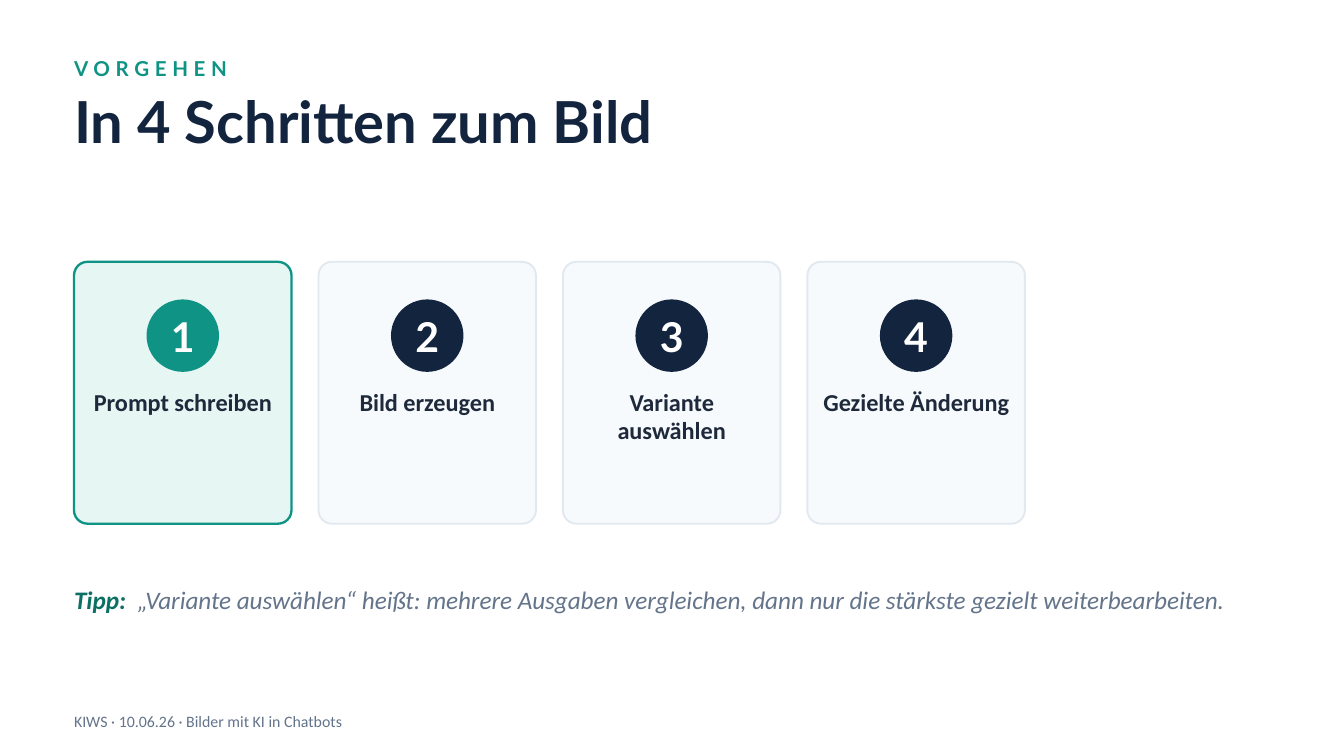
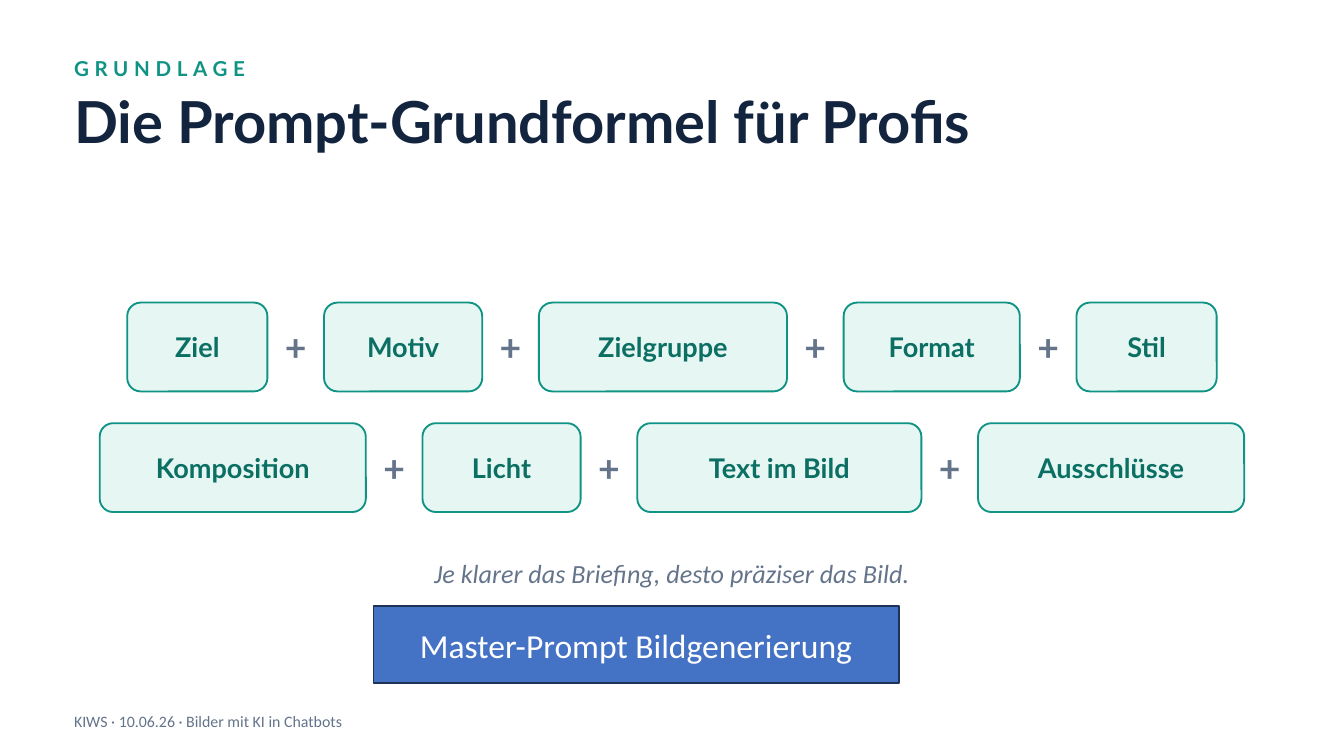
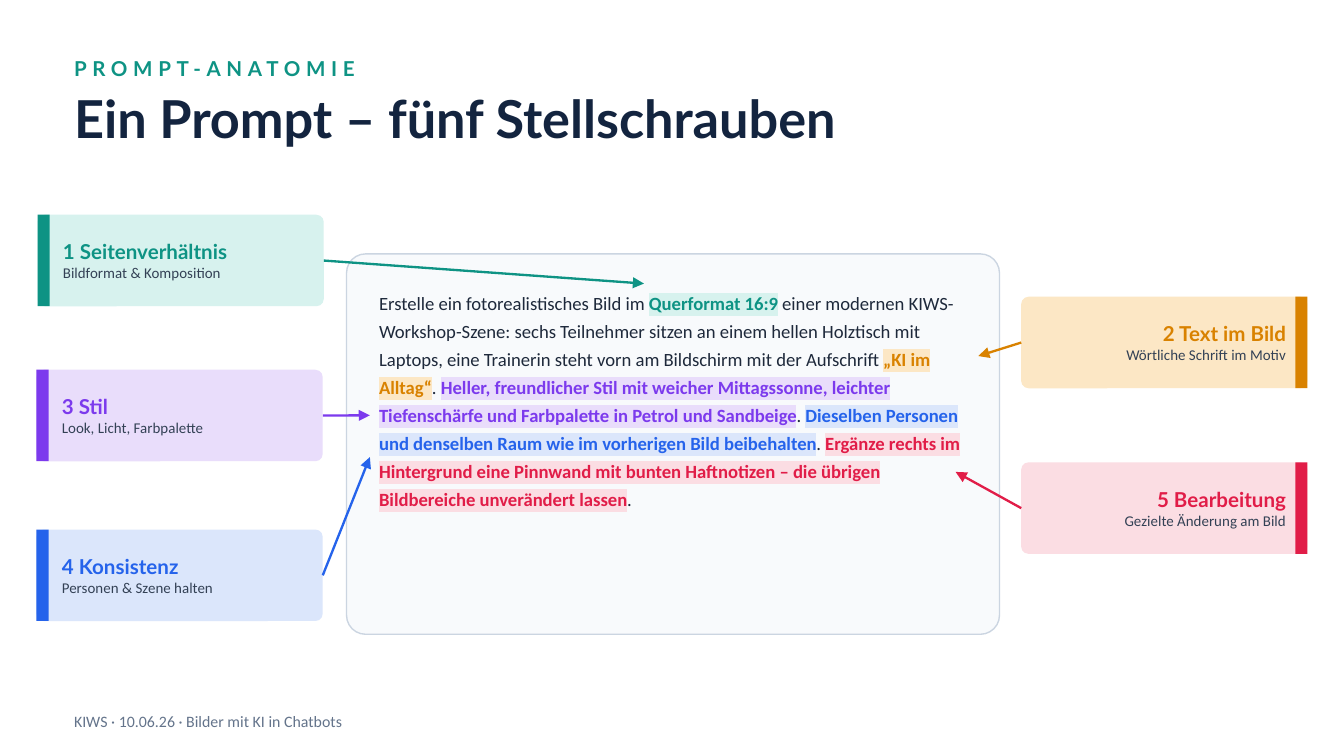
from collections import namedtuple
from dataclasses import dataclass, replace

from lxml import etree
from pptx import Presentation
from pptx.dml.color import RGBColor
from pptx.enum.shapes import MSO_CONNECTOR, MSO_SHAPE
from pptx.enum.text import MSO_ANCHOR, MSO_AUTO_SIZE, PP_ALIGN
from pptx.oxml.ns import qn
from pptx.util import Cm, Pt

TEAL, DARK_TEAL, MINT = "0E9384", "0B6F63", "E6F6F3"
NAVY, INK, SLATE, WHITE = "13243F", "1E293B", "64748B", "FFFFFF"
HEADING, BODY = "Lato", "Calibri"
MARGIN, CONTENT_WIDTH, SLIDE_WIDTH, SLIDE_HEIGHT = 1.4, 22.6, 25.4, 14.29
FOOTER = "KIWS · 10.06.26 · Bilder mit KI in Chatbots"

Box = namedtuple("Box", "left top width height")


@dataclass(frozen=True)
class Style:
    size: float
    color: str
    font: str = BODY
    bold: bool = False
    italic: bool = False
    spacing: float = 0
    highlight: str = ""


def rgb(hex_color):
    return RGBColor.from_string(hex_color)


def lengths(box):
    return [Cm(value) for value in box]


def format_run(run, style):
    font = run.font
    font.size, font.bold, font.italic = Pt(style.size), style.bold, style.italic
    font.color.rgb = rgb(style.color)
    font.name = style.font
    properties = run._r.get_or_add_rPr()
    if style.spacing:
        properties.set("spc", str(int(style.spacing * 100)))
    if style.highlight:
        mark = etree.Element(qn("a:highlight"))
        etree.SubElement(mark, qn("a:srgbClr")).set("val", style.highlight)
        properties.find(qn("a:solidFill")).addnext(mark)


def write(shape, *paragraphs, align=PP_ALIGN.LEFT, anchor=MSO_ANCHOR.TOP,
          inset=0, line_spacing=None, space_after=None):
    """Fill a shape with paragraphs, each a list of (text, style) pairs."""
    frame = shape.text_frame
    frame.word_wrap, frame.auto_size = True, MSO_AUTO_SIZE.NONE
    frame.vertical_anchor = anchor
    frame.margin_left = frame.margin_right = Cm(inset)
    frame.margin_top = frame.margin_bottom = Cm(inset)
    for index, pieces in enumerate(paragraphs):
        paragraph = frame.add_paragraph() if index else frame.paragraphs[0]
        paragraph.alignment = align
        paragraph.line_spacing = line_spacing
        paragraph.space_after = space_after
        for text, style in pieces:
            run = paragraph.add_run()
            run.text = text
            format_run(run, style)


def add_text(shapes, box, *paragraphs, **layout):
    write(shapes.add_textbox(*lengths(box)), *paragraphs, **layout)


def add_panel(shapes, kind, box, fill, line=None, line_width=1, rounding=None):
    panel = shapes.add_shape(kind, *lengths(box))
    panel.shadow.inherit = False
    panel.fill.solid()
    panel.fill.fore_color.rgb = rgb(fill)
    if line:
        panel.line.color.rgb = rgb(line)
        panel.line.width = Pt(line_width)
    else:
        panel.line.fill.background()
    if rounding is not None:
        panel.adjustments[0] = rounding
    return panel


def add_arrow(shapes, start, tip, color):
    arrow = shapes.add_connector(
        MSO_CONNECTOR.STRAIGHT, *lengths(start), *lengths(tip))
    arrow.line.color.rgb = rgb(color)
    arrow.line.width = Pt(1.25)
    etree.SubElement(arrow.line._get_or_add_ln(),
                     qn("a:tailEnd")).set("type", "triangle")
    etree.SubElement(arrow._element.spPr, qn("a:effectLst"))


def add_titled_slide(deck, eyebrow, title, title_size=31, title_height=2.16):
    """Add a slide with the shared eyebrow, title and footer."""
    slide = deck.slides.add_slide(deck.slide_layouts[5])
    heading = slide.shapes.title
    heading.left, heading.top, heading.width, heading.height = lengths(
        Box(MARGIN, 1.68, CONTENT_WIDTH, title_height))
    write(heading, [(title, Style(title_size, NAVY, HEADING, bold=True))],
          line_spacing=0.98)
    add_text(slide.shapes, Box(MARGIN, 0.91, CONTENT_WIDTH, 0.76),
             [(eyebrow, Style(11, TEAL, HEADING, bold=True, spacing=3))],
             anchor=MSO_ANCHOR.MIDDLE)
    add_text(slide.shapes, Box(MARGIN, 13.26, 15.24, 0.76),
             [(FOOTER, Style(8.5, SLATE))], anchor=MSO_ANCHOR.MIDDLE)
    return slide


def add_step_card(shapes, box, number, label, active):
    fill, line, line_width, badge_fill = (
        (MINT, TEAL, 1.25, TEAL) if active else ("F7FAFC", "E2E8F0", 1, NAVY))
    add_panel(shapes, MSO_SHAPE.ROUNDED_RECTANGLE, box, fill, line,
              line_width, rounding=0.062)
    diameter, padding = 1.37, 0.25
    badge = add_panel(
        shapes, MSO_SHAPE.OVAL,
        Box(box.left + (box.width - diameter) / 2, box.top + 0.71,
            diameter, diameter), badge_fill)
    write(badge, [(str(number), Style(22, WHITE, HEADING, bold=True))],
          align=PP_ALIGN.CENTER, anchor=MSO_ANCHOR.MIDDLE)
    add_text(shapes, Box(box.left + padding, box.top + 2.41,
                         box.width - 2 * padding, 2.29),
             [(label, Style(13, INK, bold=True))],
             align=PP_ALIGN.CENTER, line_spacing=0.95)


def build_steps(deck):
    slide = add_titled_slide(deck, "VORGEHEN", "In 4 Schritten zum Bild")
    steps = ["Prompt schreiben", "Bild erzeugen", "Variante auswählen",
             "Gezielte Änderung"]
    card_width, gap = 4.11, 0.51
    for index, step in enumerate(steps):
        card = Box(MARGIN + index * (card_width + gap), 4.95, card_width, 4.95)
        add_step_card(slide.shapes, card, index + 1, step, active=index == 0)
    lead = Style(13.5, DARK_TEAL, bold=True, italic=True)
    add_text(slide.shapes, Box(MARGIN, 11.05, CONTENT_WIDTH, 1.52), [
        ("Tipp:", lead),
        (" ", replace(lead, spacing=3)),
        ("„Variante auswählen“ heißt: mehrere Ausgaben vergleichen, dann nur "
         "die stärkste gezielt weiterbearbeiten.",
         replace(lead, color=SLATE, bold=False))])


def add_formula_row(shapes, row, terms):
    """Centre the terms in the row, sized by word length and joined by plus signs."""
    plus_width = 1.07
    widths = [1.29 + 0.34 * len(term) for term in terms]
    total = sum(widths) + plus_width * (len(terms) - 1)
    left = row.left + (row.width - total) / 2
    centred = dict(align=PP_ALIGN.CENTER, anchor=MSO_ANCHOR.MIDDLE)
    for index, (term, width) in enumerate(zip(terms, widths)):
        if index:
            add_text(shapes, Box(left, row.top, plus_width, row.height),
                     [("+", Style(20, SLATE, HEADING, bold=True))], **centred)
            left += plus_width
        pill = add_panel(shapes, MSO_SHAPE.ROUNDED_RECTANGLE,
                         Box(left, row.top, width, row.height),
                         MINT, TEAL, rounding=0.152)
        write(pill, [(term, Style(14.5, DARK_TEAL, HEADING, bold=True))],
              **centred)
        left += width


def build_formula(deck):
    slide = add_titled_slide(deck, "GRUNDLAGE",
                             "Die Prompt-Grundformel für Profis")
    rows = [["Ziel", "Motiv", "Zielgruppe", "Format", "Stil"],
            ["Komposition", "Licht", "Text im Bild", "Ausschlüsse"]]
    for index, terms in enumerate(rows):
        add_formula_row(slide.shapes,
                        Box(0, 5.72 + index * 2.28, SLIDE_WIDTH, 1.68), terms)
    add_text(slide.shapes, Box(MARGIN, 10.54, CONTENT_WIDTH, 1.27),
             [("Je klarer das Briefing, desto präziser das Bild.",
               Style(14, SLATE, italic=True))], align=PP_ALIGN.CENTER)
    master_prompt = add_panel(slide.shapes, MSO_SHAPE.RECTANGLE,
                              Box(7.06, 11.46, 9.93, 1.45), "4472C4", "1E3256")
    write(master_prompt, [("Master-Prompt Bildgenerierung", Style(18, WHITE))],
          align=PP_ALIGN.CENTER, anchor=MSO_ANCHOR.MIDDLE, inset=0.13)


Lever = namedtuple("Lever", "name detail color tint left top tip")
LEFT_COLUMN, RIGHT_COLUMN = 0.69, 19.3
FORMAT = Lever("1 Seitenverhältnis", "Bildformat & Komposition",
               TEAL, "D7F2EE", 0.71, 4.06, (12.17, 5.36))
LETTERING = Lever("2 Text im Bild", "Wörtliche Schrift im Motiv",
                  "D98200", "FCE7C5", RIGHT_COLUMN, 5.61, (18.49, 6.73))
LOOK = Lever("3 Stil", "Look, Licht, Farbpalette",
             "7C3AED", "E9DDFB", LEFT_COLUMN, 6.99, (6.99, 7.85))
CONSISTENCY = Lever("4 Konsistenz", "Personen & Szene halten",
                    "2563EB", "DBE6FB", LEFT_COLUMN, 10.01, (6.99, 8.64))
EDITING = Lever("5 Bearbeitung", "Gezielte Änderung am Bild",
                "E11D48", "FBDDE3", RIGHT_COLUMN, 8.74, (18.06, 8.92))
PROMPT = [
    ("Erstelle ein fotorealistisches Bild im ", None),
    ("Querformat 16:9", FORMAT),
    (" einer modernen KIWS-Workshop-Szene: sechs Teilnehmer sitzen an einem "
     "hellen Holztisch mit Laptops, eine Trainerin steht vorn am Bildschirm "
     "mit der Aufschrift ", None),
    ("„KI im Alltag“", LETTERING),
    (". ", None),
    ("Heller, freundlicher Stil mit weicher Mittagssonne, leichter "
     "Tiefenschärfe und Farbpalette in Petrol und Sandbeige", LOOK),
    (". ", None),
    ("Dieselben Personen und denselben Raum wie im vorherigen Bild "
     "beibehalten", CONSISTENCY),
    (". ", None),
    ("Ergänze rechts im Hintergrund eine Pinnwand mit bunten Haftnotizen – "
     "die übrigen Bildbereiche unverändert lassen", EDITING),
    (".", None),
]


def add_prompt(shapes, box):
    plain = Style(10, INK)
    panel = add_panel(shapes, MSO_SHAPE.ROUNDED_RECTANGLE, box, "F8FAFC",
                      "CBD5E1", 0.75, rounding=0.05)
    pieces = [(text, replace(plain, color=lever.color, bold=True,
                             highlight=lever.tint) if lever else plain)
              for text, lever in PROMPT]
    write(panel, pieces, inset=0.51, line_spacing=1.25, space_after=Pt(4))


def add_lever(shapes, box, lever):
    """Draw a callout with its bar on the outer side and its arrow on the inner."""
    bar_width, text_width = 0.23, 5.03
    right = box.left + box.width
    if box.left > SLIDE_WIDTH / 2:
        bar_left, text_left, inner = right - bar_width, box.left + 0.08, box.left
        align = PP_ALIGN.RIGHT
    else:
        bar_left, text_left, inner = box.left, box.left + 0.38, right
        align = PP_ALIGN.LEFT
    add_panel(shapes, MSO_SHAPE.ROUNDED_RECTANGLE, box, lever.tint,
              rounding=0.08)
    add_panel(shapes, MSO_SHAPE.RECTANGLE,
              Box(bar_left, box.top, bar_width, box.height), lever.color)
    add_text(shapes, Box(text_left, box.top + 0.06, text_width, 1.6),
             [(lever.name, Style(11, lever.color, HEADING, bold=True))],
             [(lever.detail, Style(8, "334155"))],
             align=align, anchor=MSO_ANCHOR.MIDDLE, inset=0.1)
    add_arrow(shapes, (inner, box.top + box.height / 2), lever.tip, lever.color)


def build_anatomy(deck):
    slide = add_titled_slide(deck, "PROMPT-ANATOMIE",
                             "Ein Prompt – fünf Stellschrauben", 28, 1.68)
    add_prompt(slide.shapes, Box(6.55, 4.8, 12.34, 7.19))
    for lever in (FORMAT, LETTERING, LOOK, CONSISTENCY, EDITING):
        group = slide.shapes.add_group_shape()
        add_lever(group.shapes, Box(lever.left, lever.top, 5.41, 1.73), lever)


def main():
    deck = Presentation()
    deck.slide_width, deck.slide_height = Cm(SLIDE_WIDTH), Cm(SLIDE_HEIGHT)
    build_steps(deck)
    build_formula(deck)
    build_anatomy(deck)
    deck.save("out.pptx")


if __name__ == "__main__":
    main()
